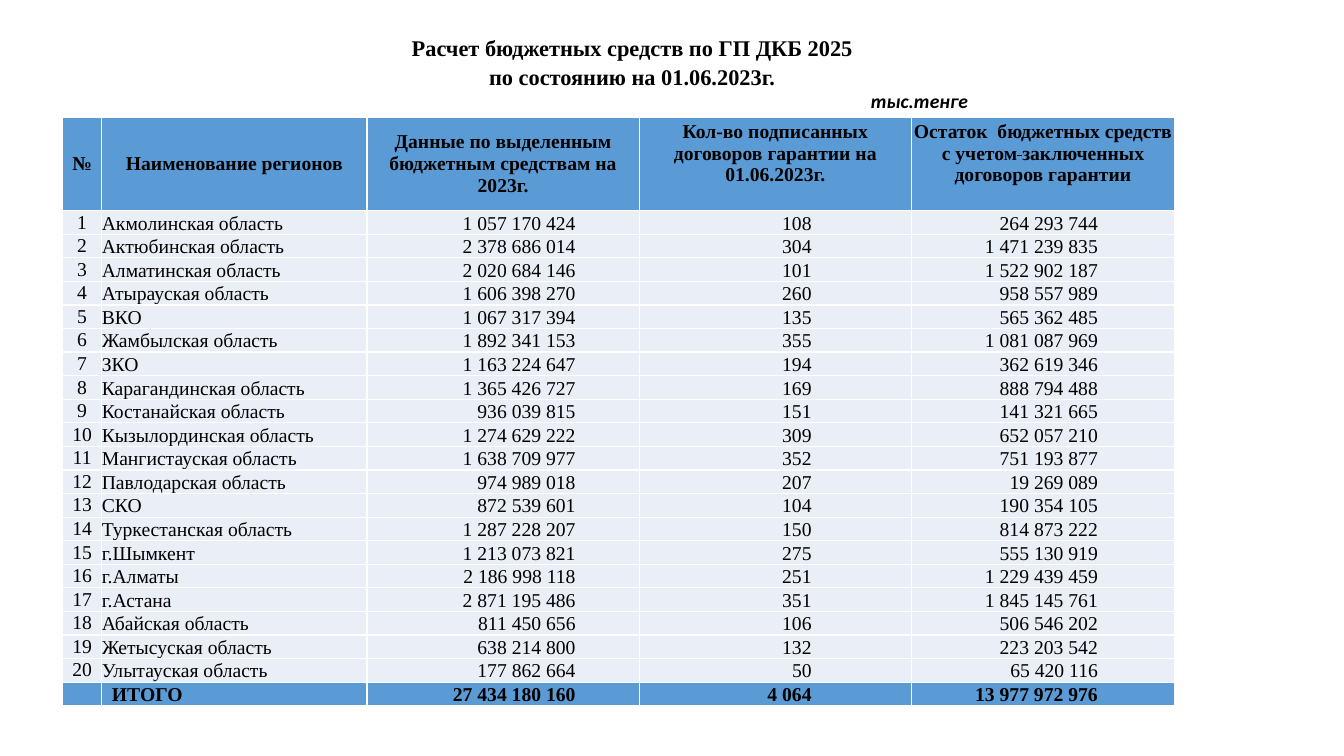
from pptx import Presentation
from pptx.dml.color import RGBColor
from pptx.enum.text import MSO_ANCHOR, PP_ALIGN
from pptx.oxml import parse_xml
from pptx.oxml.ns import nsdecls
from pptx.util import Inches, Pt

BLACK = RGBColor(0x00, 0x00, 0x00)
BLUE = RGBColor(0x5B, 0x9B, 0xD5)
PALE = RGBColor(0xEA, 0xEF, 0xF7)
EDGE = RGBColor(0xFF, 0xFF, 0xFF)

HEADS = [
    "№",
    "Наименование регионов",
    "Данные по выделенным бюджетным средствам на 2023г.",
    "Кол-во подписанных договоров гарантии на 01.06.2023г.",
    "Остаток  бюджетных средств с учетом",
]
REGIONS = [
    ("Акмолинская область", 1057170424, 108, 264293744),
    ("Актюбинская область", 2378686014, 304, 1471239835),
    ("Алматинская область", 2020684146, 101, 1522902187),
    ("Атырауская область", 1606398270, 260, 958557989),
    ("ВКО", 1067317394, 135, 565362485),
    ("Жамбылская область", 1892341153, 355, 1081087969),
    ("ЗКО", 1163224647, 194, 362619346),
    ("Карагандинская область", 1365426727, 169, 888794488),
    ("Костанайская область", 936039815, 151, 141321665),
    ("Кызылординская область", 1274629222, 309, 652057210),
    ("Мангистауская область", 1638709977, 352, 751193877),
    ("Павлодарская область", 974989018, 207, 19269089),
    ("СКО", 872539601, 104, 190354105),
    ("Туркестанская область", 1287228207, 150, 814873222),
    ("г.Шымкент", 1213073821, 275, 555130919),
    ("г.Алматы", 2186998118, 251, 1229439459),
    ("г.Астана", 2871195486, 351, 1845145761),
    ("Абайская область", 811450656, 106, 506546202),
    ("Жетысуская область", 638214800, 132, 223203542),
    ("Улытауская область", 177862664, 50, 65420116),
]
TOTAL = ("ИТОГО", 27434180160, 4064, 13977972976)

WIDTHS = [0.39, 2.63, 2.7, 2.7, 2.61]
PADS = [0, 0, 0.63, 0.99, 0.76]  # right margins of the number columns
HEIGHT, HEAD = 5.83, 0.93


class Page:
    def __init__(self, deck):
        self.slide = deck.slides.add_slide(deck.slide_layouts[6])
        self.font = "Times New Roman"
        self.size = 14

    def style(self, para, align, bold=False, italic=False, size=None, font=None):
        para.alignment = align
        for run in para.runs:
            run.font.name = font or self.font
            run.font.size = Pt(size or self.size)
            run.font.bold = bold
            run.font.italic = italic
            run.font.color.rgb = BLACK

    def text(self, text, left, top, width, height, align, **look):
        box = self.slide.shapes.add_textbox(
            Inches(left), Inches(top), Inches(width), Inches(height))
        box.text_frame.word_wrap = True
        para = box.text_frame.paragraphs[0]
        para.text = text
        para.line_spacing = 1.05
        self.style(para, align, **look)

    def table(self, left, top, widths, heights):
        frame = self.slide.shapes.add_table(
            len(heights), len(widths), Inches(left), Inches(top),
            Inches(sum(widths)), Inches(sum(heights)))
        grid = frame.table
        grid.first_row = grid.horz_banding = False
        for col, width in zip(grid.columns, widths):
            col.width = Inches(width)
        for row, height in zip(grid.rows, heights):
            row.height = Inches(height)
        return grid

    def cell(self, cell, text, fill, align, bold=False, left=0, right=0,
             bottom=0, anchor=MSO_ANCHOR.MIDDLE):
        self.edge(cell)
        cell.fill.solid()
        cell.fill.fore_color.rgb = fill
        cell.margin_left, cell.margin_right = Inches(left), Inches(right)
        cell.margin_top, cell.margin_bottom = 0, Inches(bottom)
        cell.vertical_anchor = anchor
        para = cell.text_frame.paragraphs[0]
        para.text = text
        para.font.size = Pt(self.size)
        self.style(para, align, bold)

    def edge(self, cell):
        """Draw a thin line on all four sides of the cell."""
        props = cell._tc.get_or_add_tcPr()
        for side in "LRTB":
            props.append(parse_xml(
                f'<a:ln{side} {nsdecls("a")} w="{Pt(1)}"><a:solidFill>'
                f'<a:srgbClr val="{EDGE}"/></a:solidFill></a:ln{side}>'))

    def line(self, grid, row, num, record, fill, bold=False, indent=0):
        """Fill one row: its number, the region and three amounts."""
        self.cell(grid.cell(row, 0), num, fill, PP_ALIGN.CENTER, bold)
        self.cell(grid.cell(row, 1), record[0], fill, PP_ALIGN.LEFT, bold,
                  left=indent, anchor=MSO_ANCHOR.BOTTOM)
        for col, value in enumerate(record[1:], 2):
            self.cell(grid.cell(row, col), f"{value:,}".replace(",", " "), fill,
                      PP_ALIGN.RIGHT, bold, right=PADS[col],
                      anchor=MSO_ANCHOR.BOTTOM)


def main():
    deck = Presentation()
    deck.slide_width, deck.slide_height = Inches(13.33), Inches(7.5)
    page = Page(deck)

    page.text("Расчет бюджетных средств по ГП ДКБ 2025\vпо состоянию на 01.06.2023г.",
              0.42, 0.28, 11.7, 0.64, PP_ALIGN.CENTER, bold=True, size=16)
    page.text("тыс.тенге", 8.4, 0.82, 1.3, 0.34, PP_ALIGN.RIGHT,
              bold=True, italic=True, font="Calibri")

    count = len(REGIONS) + 1
    step = (HEIGHT - HEAD) / count
    grid = page.table(0.62, 1.16, WIDTHS, [HEAD] + [step] * count)
    for col, head in enumerate(HEADS):
        page.cell(grid.cell(0, col), head, BLUE, PP_ALIGN.CENTER, True,
                  bottom=0.2 if col > 2 else 0)
    para = grid.cell(0, 4).text_frame.paragraphs[0]
    for part in (" ", "заключенных договоров гарантии"):
        para.add_run().text = part
    page.style(para, PP_ALIGN.CENTER, True)
    para.runs[1]._r.get_or_add_rPr().set("strike", "sngStrike")

    for row, record in enumerate(REGIONS, 1):
        page.line(grid, row, str(row), record, PALE)
    page.line(grid, count, "", TOTAL, BLUE, bold=True, indent=0.1)

    deck.save("out.pptx")


if __name__ == "__main__":
    main()
